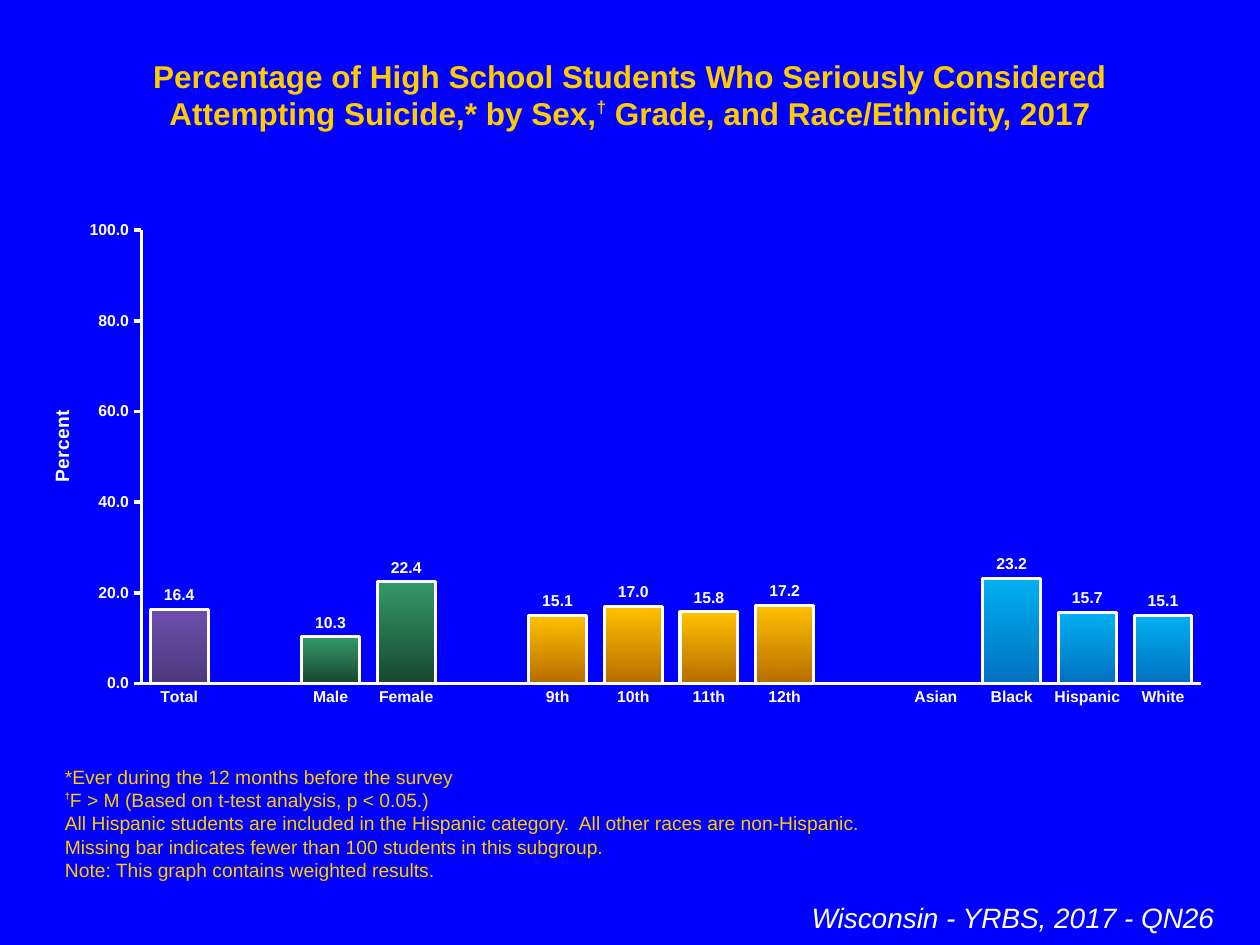
from dataclasses import dataclass
from typing import Optional

from lxml import etree
from pptx import Presentation
from pptx import util as u
from pptx.chart.data import CategoryChartData
from pptx.dml.color import RGBColor
from pptx.enum import chart as ch
from pptx.enum import text
from pptx.oxml import ns

Pt = u.Pt


@dataclass(frozen=True)
class Theme:
    font: str = "Arial"
    background: str = "0000FF"
    gold: str = "FFCC00"
    white: str = "FFFFFF"
    series: str = "26CA59"
    title: float = 18
    title_mark: float = 17
    note: float = 11
    note_mark: float = 9
    source: float = 16
    chart: float = 18
    axis_title: float = 11
    label: float = 9


THEME = Theme()


@dataclass(frozen=True)
class Box:
    left: float
    top: float
    width: float
    height: float

    def emu(self) -> tuple:
        return Pt(self.left), Pt(self.top), Pt(self.width), Pt(self.height)


@dataclass(frozen=True)
class Run:
    text: str
    size: float
    bold: bool = False
    italic: bool = False
    raised: int = 0  # percent above the baseline


@dataclass(frozen=True)
class BarGroup:
    bars: dict[str, Optional[float]]
    top: str
    bottom: str


GROUPS = [
    BarGroup({"Total": 16.4}, "6E4EAE", "4F387C"),
    BarGroup({"Male": 10.3, "Female": 22.4}, "339966", "18472F"),
    BarGroup({"9th": 15.1, "10th": 17.0, "11th": 15.8, "12th": 17.2}, "FFC000", "B66D00"),
    BarGroup({"Asian": None, "Black": 23.2, "Hispanic": 15.7, "White": 15.1}, "00B0F0", "0070C0"),
]

TITLE = [[
    Run("Percentage of High School Students Who Seriously Considered "
        "Attempting Suicide,* by Sex,", THEME.title, bold=True),
    Run("†", THEME.title_mark, bold=True, raised=40),
    Run(" Grade, and Race/Ethnicity, 2017", THEME.title, bold=True),
]]
NOTES = [
    [Run("*Ever during the 12 months before the survey", THEME.note)],
    [Run("†", THEME.note_mark, bold=True, raised=50),
     Run("F > M (Based on t-test analysis, p < 0.05.)", THEME.note)],
    [Run("All Hispanic students are included in the Hispanic category.  "
         "All other races are non-Hispanic.", THEME.note)],
    [Run("Missing bar indicates fewer than 100 students in this subgroup.", THEME.note)],
    [Run("Note: This graph contains weighted results.", THEME.note)],
]
SOURCE = [[Run("Wisconsin - YRBS, 2017 - QN26", THEME.source, italic=True)]]


def style_font(font, size: float, color: str, bold: bool = False) -> None:
    font.name = THEME.font
    font.size = Pt(size)
    font.bold = bold
    font.color.rgb = RGBColor.from_string(color)


def style_line(line, width: float) -> None:
    line.color.rgb = RGBColor.from_string(THEME.white)
    line.width = Pt(width)


def add_text(s, box: Box, paragraphs: list[list[Run]], color: str, align, anchor) -> None:
    tf = s.shapes.add_textbox(*box.emu()).text_frame
    tf.word_wrap = True
    tf.auto_size = text.MSO_AUTO_SIZE.SHAPE_TO_FIT_TEXT
    tf.vertical_anchor = anchor
    for i, runs in enumerate(paragraphs):
        p = tf.add_paragraph() if i else tf.paragraphs[0]
        p.alignment = align
        for run in runs:
            r = p.add_run()
            r.text = run.text
            style_font(r.font, run.size, color, run.bold)
            r.font.italic = run.italic
            if run.raised:
                r._r.get_or_add_rPr().set("baseline", str(run.raised * 1000))


def set_layout(parent, after: str, inner: bool = False, **fractions: float) -> None:
    """Place a chart part by fractions of the chart area; after is its preceding sibling."""
    for old in parent.findall(ns.qn("c:layout")):
        parent.remove(old)
    layout = etree.Element(ns.qn("c:layout"))
    manual = etree.SubElement(layout, ns.qn("c:manualLayout"))
    if inner:
        etree.SubElement(manual, ns.qn("c:layoutTarget"), val="inner")
    for mode in ("xMode", "yMode"):
        etree.SubElement(manual, ns.qn(f"c:{mode}"), val="edge")
    for key, value in fractions.items():
        etree.SubElement(manual, ns.qn(f"c:{key}"), val=str(value))
    sibling = parent.find(ns.qn(after)) if after else None
    parent.insert(0 if sibling is None else parent.index(sibling) + 1, layout)


def style_axes(chart) -> None:
    for axis in (chart.category_axis, chart.value_axis):
        axis.has_major_gridlines = False
        axis.minor_tick_mark = ch.XL_TICK_MARK.NONE
        style_line(axis.format.line, 2)
        style_font(axis.tick_labels.font, THEME.label, THEME.white, bold=True)
    chart.category_axis.major_tick_mark = ch.XL_TICK_MARK.NONE
    values = chart.value_axis
    values.major_tick_mark = ch.XL_TICK_MARK.OUTSIDE
    values.minimum_scale, values.maximum_scale, values.major_unit = 0, 100, 20
    tf = values.axis_title.text_frame
    tf.text = "Percent"
    style_font(tf.paragraphs[0].runs[0].font, THEME.axis_title, THEME.white, bold=True)
    tf._txBody.bodyPr.set("rot", "-5400000")
    tf._txBody.bodyPr.set("vert", "horz")
    set_layout(values.axis_title._element, "c:tx", x=0.02, y=0.39)


def fill_bar(point, group: BarGroup) -> None:
    fill = point.format.fill
    fill.gradient()
    fill.gradient_angle = 270
    for stop, color in zip(fill.gradient_stops, (group.top, group.bottom)):
        stop.color.rgb = RGBColor.from_string(color)
    style_line(point.format.line, 1.75)


def add_bar_chart(s, box: Box, groups: list[BarGroup]) -> None:
    """Draw the groups as one series with an empty category between neighbours."""
    slots = []
    for i, group in enumerate(groups):
        if i:
            slots.append(("", None, None))
        slots += [(name, value, group) for name, value in group.bars.items()]
    data = CategoryChartData(number_format="#,##0.0")
    data.categories = [name for name, _, _ in slots]
    data.add_series("Series 1", [value for _, value, _ in slots])
    chart = s.shapes.add_chart(ch.XL_CHART_TYPE.COLUMN_CLUSTERED, *box.emu(), data).chart
    chart.has_legend = chart.has_title = False
    style_font(chart.font, THEME.chart, THEME.white)
    style_axes(chart)

    plot = chart.plots[0]
    plot.gap_width, plot.overlap = 31, 100
    plot.vary_by_categories = False
    series = plot.series[0]
    series.format.fill.solid()
    series.format.fill.fore_color.rgb = RGBColor.from_string(THEME.series)
    for i, (_, _, group) in enumerate(slots):
        if group:
            fill_bar(series.points[i], group)
    labels = series.data_labels
    labels.show_value = True
    labels.number_format, labels.number_format_is_linked = "#,##0.0", False
    labels.position = ch.XL_LABEL_POSITION.OUTSIDE_END
    style_font(labels.font, THEME.label, THEME.white, bold=True)
    plot_area = chart._chartSpace.chart.plotArea
    set_layout(plot_area, "", inner=True, x=0.1, y=0.04, w=0.88, h=0.9)


def main() -> None:
    prs = Presentation()
    prs.slide_width, prs.slide_height = Pt(720), Pt(540)
    s = prs.slides.add_slide(prs.slide_layouts[6])
    s.background.fill.solid()
    s.background.fill.fore_color.rgb = RGBColor.from_string(THEME.background)
    align, anchor = text.PP_ALIGN, text.MSO_ANCHOR
    add_text(s, Box(36, 28.8, 648, 28.8), TITLE, THEME.gold, align.CENTER, anchor.TOP)
    add_text(s, Box(30, 486, 660, 21), NOTES, THEME.gold, align.LEFT, anchor.BOTTOM)
    add_text(s, Box(24, 511, 677, 26.5), SOURCE, THEME.white, align.RIGHT, anchor.TOP)
    add_bar_chart(s, Box(12, 120, 688, 288), GROUPS)
    prs.save("out.pptx")


if __name__ == "__main__":
    main()
